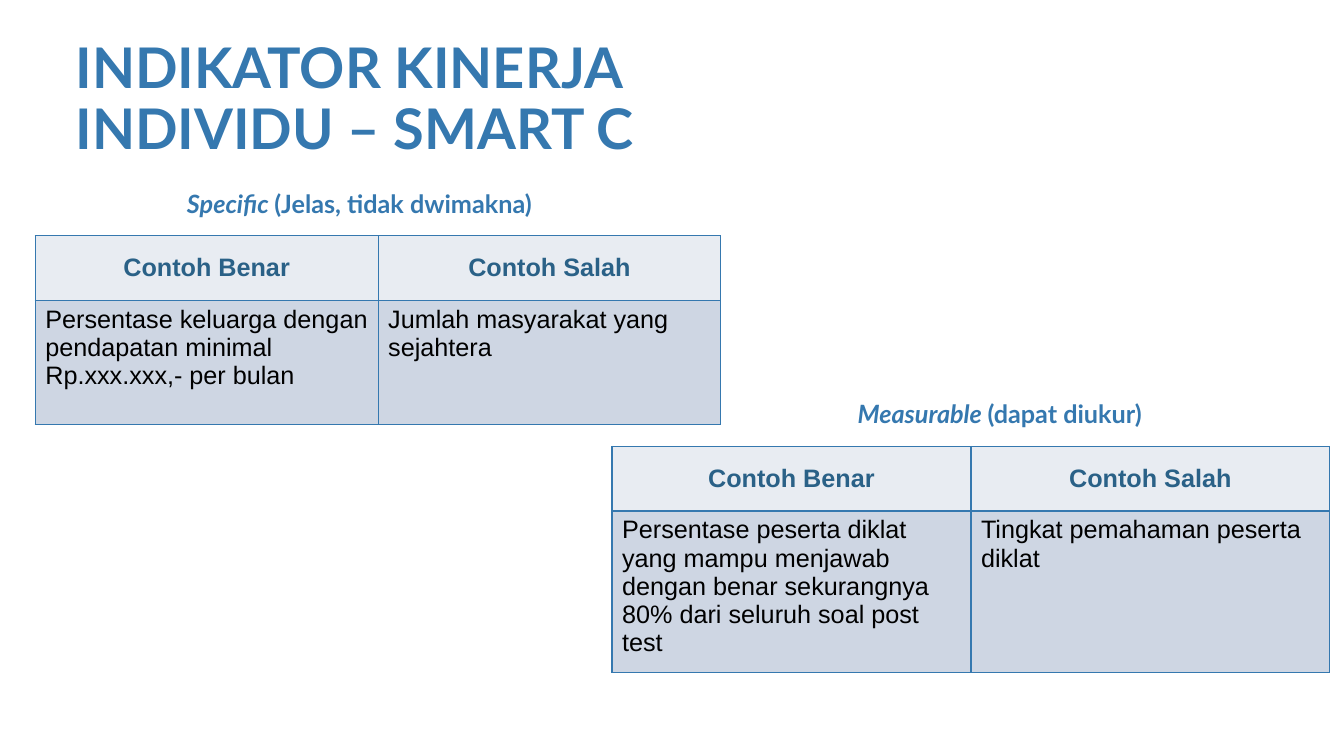
from lxml import etree
from pptx import Presentation
from pptx.dml.color import RGBColor
from pptx.enum.text import MSO_ANCHOR, MSO_AUTO_SIZE, PP_ALIGN
from pptx.oxml.ns import qn
from pptx.util import Inches, Pt

LEFT, CENTER = PP_ALIGN.LEFT, PP_ALIGN.CENTER
TOP, MIDDLE = MSO_ANCHOR.TOP, MSO_ANCHOR.MIDDLE
NO_AUTOFIT = MSO_AUTO_SIZE.NONE

TITLE_ONLY = 5
BLUE, HEADER_TEXT, BLACK = "3578AF", "2A6187", "000000"
HEADER_FILL, BODY_FILL = "E8ECF2", "CED6E3"
ROW_HEIGHTS = (0.64, 1.23)
TEXT_WIDTH, CAPTION_HEIGHT = 5.83, 0.73

# caption position, table position, column width, caption words, example row
CRITERIA = [
    ((0.65, 1.82), (0.35, 2.34), 3.4, ("Specific ", "(Jelas, tidak dwimakna)"),
     ("Persentase keluarga dengan pendapatan minimal Rp.xxx.xxx,- per bulan",
      "Jumlah masyarakat yang sejahtera")),
    ((7, 3.9), (6.07, 4.43), 3.56, ("Measurable ", "(dapat diukur)"),
     ("Persentase peserta diklat yang mampu menjawab dengan benar "
      "sekurangnya 80% dari seluruh soal post test",
      "Tingkat pemahaman peserta diklat")),
]
HEADERS = ("Contoh Benar", "Contoh Salah")


def rgb(color):
    return RGBColor.from_string(color)


def style_run(run, size, font, color, bold=True, italic=False):
    run.font.size = Pt(size)
    run.font.name = font
    run.font.color.rgb = rgb(color)
    run.font.bold = bold
    run.font.italic = italic


def add_title(slide, left, top, width, height):
    title = slide.shapes.title
    title.left, title.top = Inches(left), Inches(top)
    title.width, title.height = Inches(width), Inches(height)
    frame = title.text_frame
    frame.text = "INDIKATOR KINERJA INDIVIDU – SMART C"
    frame.word_wrap = True
    frame.auto_size = NO_AUTOFIT
    frame.vertical_anchor = MIDDLE
    heading = frame.paragraphs[0]
    heading.alignment = LEFT
    heading.line_spacing = 0.9
    heading.space_before = Pt(10)
    style_run(heading.runs[0], 40, "Lato", BLUE)


def add_caption(slide, left, top, term, meaning):
    box = slide.shapes.add_textbox(Inches(left), Inches(top),
                                   Inches(TEXT_WIDTH), Inches(CAPTION_HEIGHT))
    frame = box.text_frame
    frame.word_wrap = True
    frame.vertical_anchor = TOP
    caption = frame.paragraphs[0]
    caption.alignment = CENTER
    caption.space_before = Pt(10)
    for words, italic in ((term, True), (meaning, False)):
        run = caption.add_run()
        run.text = words
        style_run(run, 18, "Lato", BLUE, italic=italic)


def add_borders(cell):
    properties = cell._tc.get_or_add_tcPr()
    for position, side in enumerate(("lnL", "lnR", "lnT", "lnB")):
        line = etree.Element(qn(f"a:{side}"), w=str(Pt(1)))
        fill = etree.SubElement(line, qn("a:solidFill"))
        etree.SubElement(fill, qn("a:srgbClr"), val=BLUE)
        properties.insert(position, line)


def fill_cell(cell, words, is_header):
    cell.text = words
    cell.fill.solid()
    cell.fill.fore_color.rgb = rgb(HEADER_FILL if is_header else BODY_FILL)
    cell.vertical_anchor = MIDDLE if is_header else TOP
    paragraph = cell.text_frame.paragraphs[0]
    paragraph.alignment = CENTER if is_header else LEFT
    style_run(paragraph.runs[0], 18, "Arial",
              HEADER_TEXT if is_header else BLACK, bold=is_header)
    add_borders(cell)


def add_examples(slide, left, top, column_width, examples):
    rows = (HEADERS, examples)
    table = slide.shapes.add_table(
        len(rows), len(HEADERS), Inches(left), Inches(top),
        Inches(column_width * len(HEADERS)), Inches(sum(ROW_HEIGHTS))).table
    for column in table.columns:
        column.width = Inches(column_width)
    for r, (height, row) in enumerate(zip(ROW_HEIGHTS, rows)):
        table.rows[r].height = Inches(height)
        for c, words in enumerate(row):
            fill_cell(table.cell(r, c), words, is_header=r == 0)


def main():
    deck = Presentation()
    deck.slide_width, deck.slide_height = Inches(13.33), Inches(7.5)
    slide = deck.slides.add_slide(deck.slide_layouts[TITLE_ONLY])
    add_title(slide, 0.65, 0.35, TEXT_WIDTH, 1.3)
    for caption_at, table_at, column_width, caption, examples in CRITERIA:
        add_caption(slide, *caption_at, *caption)
        add_examples(slide, *table_at, column_width, examples)
    deck.save("out.pptx")


if __name__ == "__main__":
    main()
